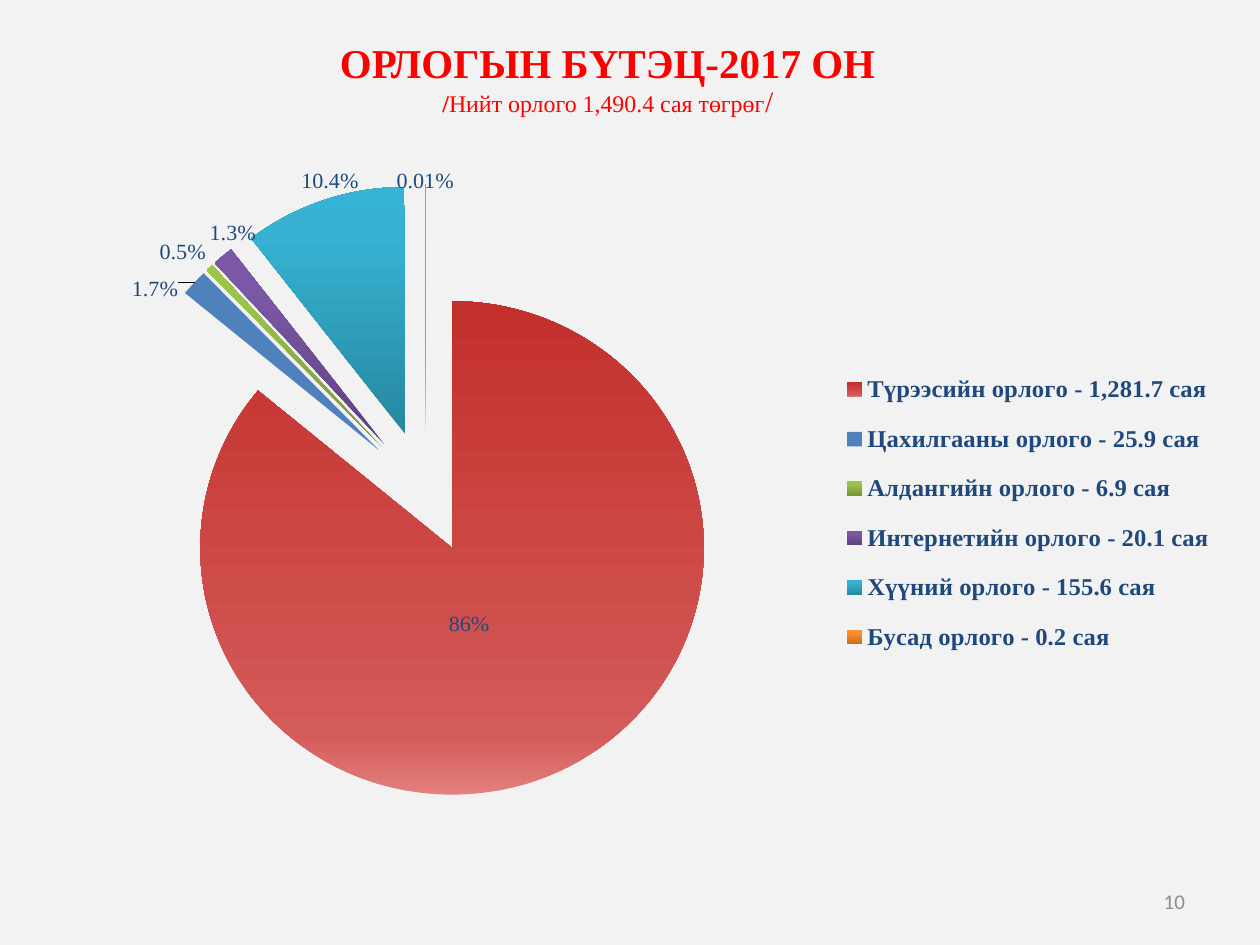
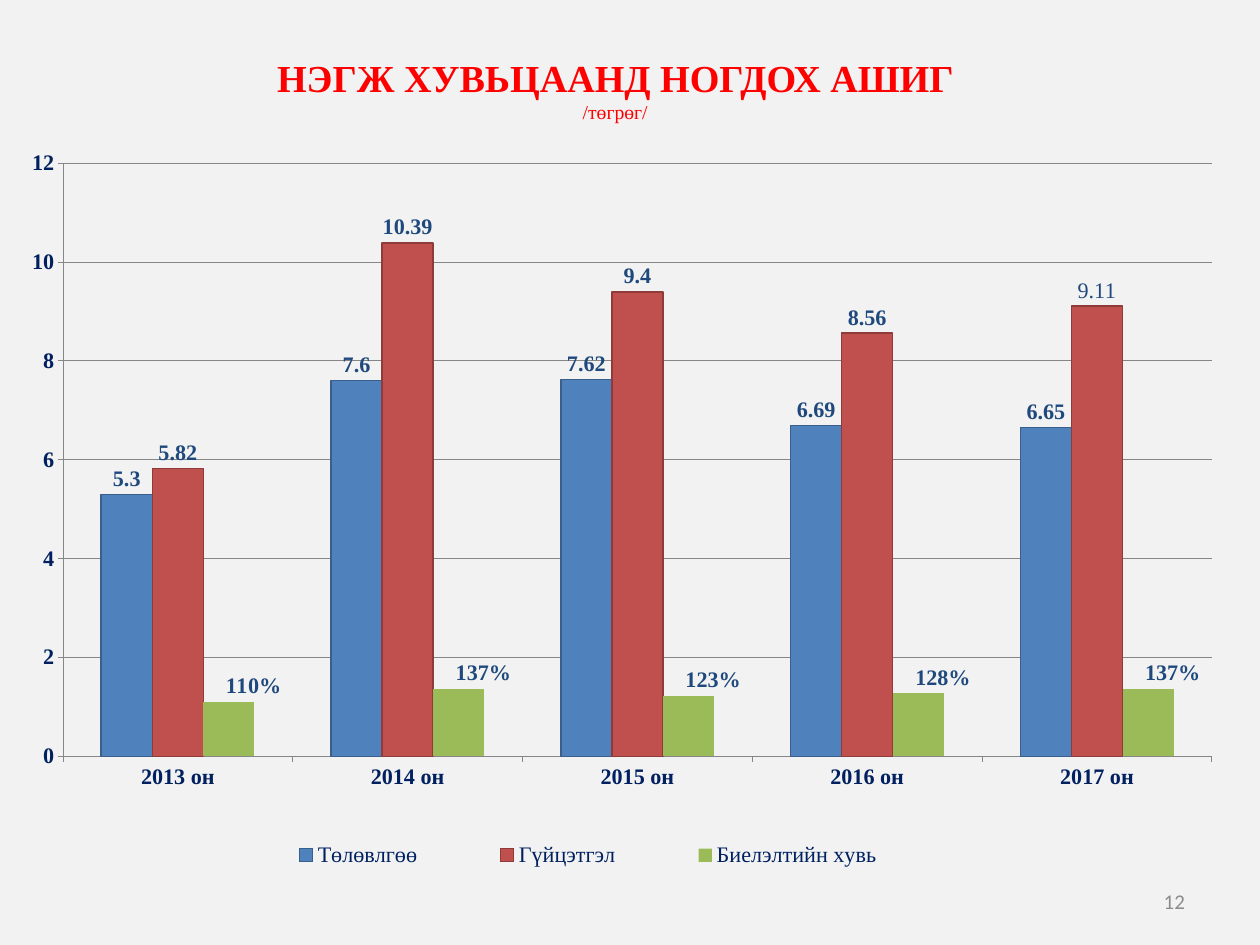
from copy import deepcopy

from lxml import etree
from pptx import Presentation
from pptx.chart.data import CategoryChartData
from pptx.dml.color import RGBColor
from pptx.enum import chart as ce, text as te
from pptx.oxml import ns
from pptx.util import Pt

RED, NAVY, LABEL_BLUE = "FF0000", "002060", "1F497D"
BACKGROUND, NUMBER_GREY, AXIS_GREY = "F2F2F2", "8C8C8C", "868686"
SERIF, SANS = "Times New Roman", "Calibri"

INCOME = [
    ("Түрээсийн орлого - 1,281.7 сая", 1281.7, "86%", (-0.03, -0.05),
     [(0, "E37F7D"), (12, "D35B59"), (100, "C32F2B")]),
    ("Цахилгааны орлого - 25.9 сая", 25.9, "1.7%", (-0.01, 0.03), "4F81BD"),
    ("Алдангийн орлого - 6.9 сая", 6.9, "0.5%", None,
     [(0, "769535"), (80, "9BC348"), (100, "9CC746")]),
    ("Интернетийн орлого - 20.1 сая", 20.1, "1.3%", (0.03, -0.01),
     [(0, "5D417E"), (80, "7B58A6"), (100, "7B57A8")]),
    ("Хүүний орлого - 155.6 сая", 155.6, "10.4%", (0.03, -0.01),
     [(0, "2787A0"), (80, "36B1D2"), (100, "34B3D6")]),
    ("Бусад орлого - 0.2 сая", 0.2, "0.01%", (0, 0.01),
     [(0, "CB6C1D"), (80, "FF8F2A"), (100, "FF8F26")]),
]
YEARS = [f"{year} он" for year in range(2013, 2018)]
PROFIT = [
    ("Төлөвлгөө", [5.3, 7.6, 7.62, 6.69, 6.65], "General", "4F81BD", "3A5F8C"),
    ("Гүйцэтгэл", [5.82, 10.39, 9.4, 8.56, 9.11], "General", "C0504D", "8E3B39"),
    ("Биелэлтийн хувь", [1.1, 1.37, 1.23, 1.28, 1.37], "0%", "9BBB59", None),
]


def rgb(value):
    return RGBColor.from_string(value)


def style(font, size, color, bold=False, face=SERIF):
    font.size, font.bold, font.name = Pt(size), bold, face
    font.color.rgb = rgb(color)


def add_run(paragraph, words, *look):
    run = paragraph.add_run()
    run.text = words
    style(run.font, *look)


def text_frame(slide, box):
    frame = slide.shapes.add_textbox(*map(Pt, box)).text_frame
    frame.word_wrap = True
    frame.vertical_anchor = te.MSO_ANCHOR.MIDDLE
    frame.margin_left = frame.margin_right = Pt(10)
    frame.margin_top = frame.margin_bottom = Pt(5)
    return frame


def new_slide(deck, number):
    slide = deck.slides.add_slide(deck.slide_layouts[6])
    slide.background.fill.solid()
    slide.background.fill.fore_color.rgb = rgb(BACKGROUND)
    paragraph = text_frame(slide, (734, 712, 239, 41)).paragraphs[0]
    paragraph.alignment = te.PP_ALIGN.RIGHT
    add_run(paragraph, str(number), 17, NUMBER_GREY, False, SANS)
    return slide


def set_layout(parent, index, place, modes):
    for old in parent.findall(ns.qn("c:layout")):
        parent.remove(old)
    layout = etree.Element(ns.qn("c:layout"))
    manual = etree.SubElement(layout, ns.qn("c:manualLayout"))
    for tag, value in [*modes, *zip("xywh", place)]:
        etree.SubElement(manual, ns.qn(f"c:{tag}")).set("val", str(value))
    parent.insert(index, layout)


def add_chart(slide, kind, box, data, plot_place, legend_position, legend_place, legend_font):
    chart = slide.shapes.add_chart(kind, *map(Pt, box), data).chart
    chart.has_title = False
    chart.has_legend = True
    chart.legend.position = legend_position
    chart.legend.include_in_layout = False
    style(chart.legend.font, *legend_font)
    edges = [("xMode", "edge"), ("yMode", "edge")]
    plot_area = chart._chartSpace.chart.plotArea
    set_layout(plot_area, 0, plot_place, [("layoutTarget", "inner"), *edges])
    set_layout(chart.legend._element, 1, legend_place, edges)
    return chart


def shift_label(series, index, offset):
    for label in series._element.iter(ns.qn("c:dLbl")):
        if label.find(ns.qn("c:idx")).get("val") == str(index):
            set_layout(label, 1, offset, [])


def write_label(label, words):
    add_run(label.text_frame.paragraphs[0], words, 18, LABEL_BLUE)


def show_values(series):
    labels = series.data_labels
    labels.show_value = True
    style(labels.font, 18, LABEL_BLUE, True)
    return labels


def paint(fill, color):
    if isinstance(color, str):
        fill.solid()
        fill.fore_color.rgb = rgb(color)
        return
    fill.gradient()
    fill.gradient_angle = 90
    stops = fill.gradient_stops._gsLst
    stops.append(deepcopy(stops[-1]))
    for stop, (position, tone) in zip(fill.gradient_stops, color):
        stop.position = position / 100
        stop.color.rgb = rgb(tone)


def income_pie(slide, box):
    data = CategoryChartData()
    data.categories = [row[0] for row in INCOME]
    data.add_series("Series 1", [row[1] for row in INCOME])
    chart = add_chart(slide, ce.XL_CHART_TYPE.PIE, box, data,
                      (0.02, 0.02, 0.63, 0.87), ce.XL_LEGEND_POSITION.RIGHT,
                      (0.67, 0.26, 0.32, 0.45), (20, LABEL_BLUE, True))
    chart.plots[0].vary_by_categories = True
    series = chart.series[0]
    show_values(series)
    for index, (_, _, share, offset, color) in enumerate(INCOME):
        point = series.points[index]
        paint(point.format.fill, color)
        write_label(point.data_label, share)
        place = ce.XL_LABEL_POSITION
        point.data_label.position = place.OUTSIDE_END if index else place.CENTER
        if offset:
            shift_label(series, index, offset)
    explosion = etree.Element(ns.qn("c:explosion"))
    explosion.set("val", "25")
    series._element.find(ns.qn("c:dPt")).addprevious(explosion)


def profit_columns(slide, box):
    data = CategoryChartData()
    data.categories = YEARS
    for name, values, number_format, _, _ in PROFIT:
        data.add_series(name, values, number_format)
    chart = add_chart(slide, ce.XL_CHART_TYPE.COLUMN_CLUSTERED, box, data,
                      (0.05, 0.04, 0.93, 0.78), ce.XL_LEGEND_POSITION.BOTTOM,
                      (0.18, 0.92, 0.59, 0.06), (18, NAVY))
    plot = chart.plots[0]
    plot.gap_width, plot.overlap = 150, 0
    plot.vary_by_categories = False
    for axis in (chart.category_axis, chart.value_axis):
        style(axis.tick_labels.font, 18, NAVY, True)
        axis.major_tick_mark = ce.XL_TICK_MARK.OUTSIDE
        axis.format.line.color.rgb = rgb(AXIS_GREY)
    values_axis = chart.value_axis
    values_axis.minimum_scale, values_axis.maximum_scale, values_axis.major_unit = 0, 12, 2
    values_axis.tick_labels.number_format = "General"
    values_axis.tick_labels.number_format_is_linked = False
    values_axis.major_gridlines.format.line.color.rgb = rgb(AXIS_GREY)
    outside = ce.XL_LABEL_POSITION.OUTSIDE_END
    for series, (_, _, number_format, color, outline) in zip(plot.series, PROFIT):
        paint(series.format.fill, color)
        series.invert_if_negative = False
        if outline:
            series.format.line.color.rgb = rgb(outline)
            series.format.line.width = Pt(1.25)
        labels = show_values(series)
        labels.position = outside
        labels.number_format = number_format
        labels.number_format_is_linked = False
    _, actual, completion = plot.series
    last_label = actual.points[4].data_label
    write_label(last_label, "9.11")
    last_label.position = outside
    for index in range(len(YEARS)):
        label = completion.points[index].data_label
        style(label.font, 18, LABEL_BLUE, True)
        label.position = outside
        shift_label(completion, index, (0.02, 0))


def income_title(slide, box):
    frame = text_frame(slide, box)
    heading, total = frame.paragraphs[0], frame.add_paragraph()
    for paragraph in (heading, total):
        paragraph.alignment = te.PP_ALIGN.CENTER
        paragraph.line_spacing = 0.9
    add_run(heading, "ОРЛОГЫН БҮТЭЦ-2017 ОН", 33.3, RED, True)
    add_run(total, "/", 19.4, RED, True)
    add_run(total, "Нийт орлого 1,490.4 сая төгрөг", 19.4, RED)
    add_run(total, "/", 24.1, RED)


def profit_title(slide, box):
    heading = text_frame(slide, box).paragraphs[0]
    heading.alignment = te.PP_ALIGN.CENTER
    add_run(heading, "НЭГЖ ХУВЬЦААНД НОГДОХ АШИГ", 31, RED, True)
    heading.add_line_break()
    add_run(heading, "/төгрөг/", 16, RED)


def main():
    deck = Presentation()
    deck.slide_width, deck.slide_height = Pt(1024), Pt(768)
    income = new_slide(deck, 10)
    income_pie(income, (14, 126, 990, 588))
    income_title(income, (32, 30, 924, 72))
    profit = new_slide(deck, 12)
    profit_columns(profit, (1, 108, 1004, 618))
    profit_title(profit, (32, 36, 936, 72))
    deck.save("out.pptx")


if __name__ == "__main__":
    main()
